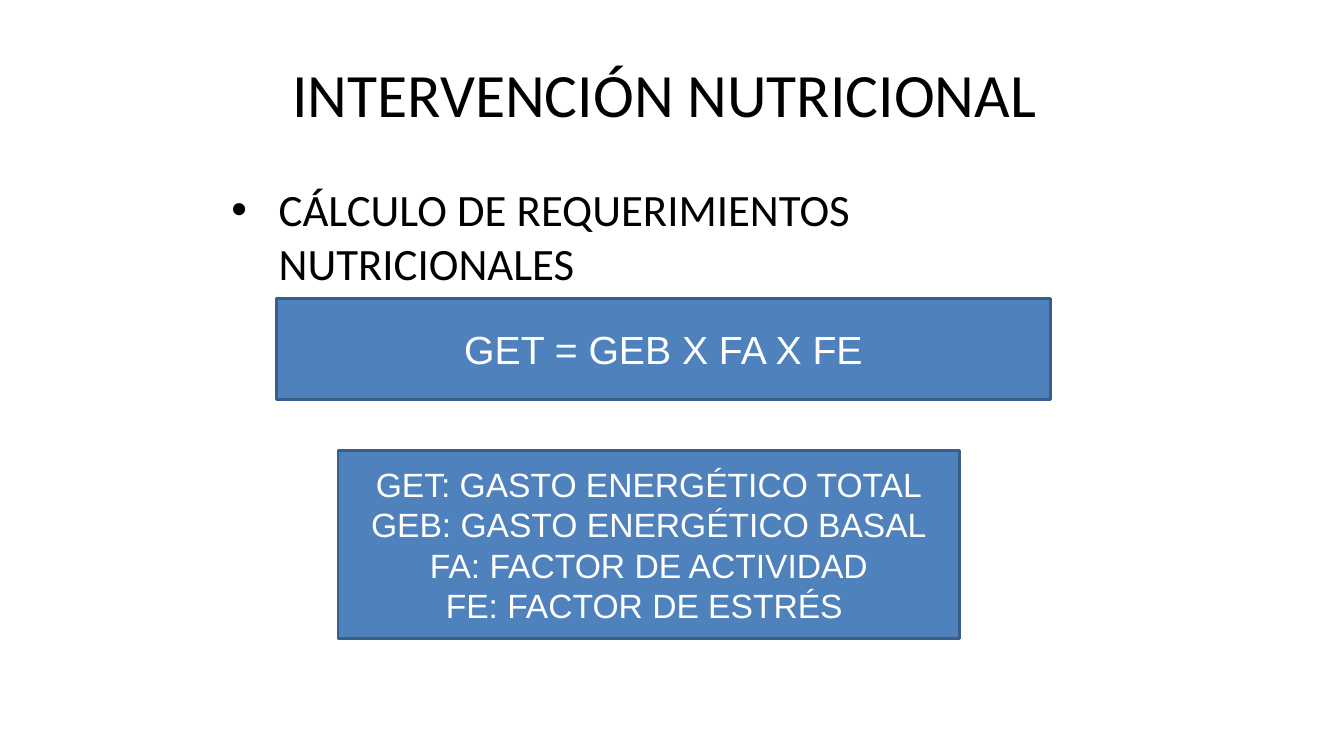
from dataclasses import dataclass

from lxml.etree import SubElement
from pptx import Presentation
from pptx.dml.color import RGBColor
from pptx.enum.shapes import MSO_SHAPE
from pptx.enum.text import MSO_ANCHOR, MSO_AUTO_SIZE, PP_ALIGN
from pptx.oxml.ns import qn
from pptx.util import Cm, Pt


@dataclass(frozen=True)
class Theme:
    text: RGBColor = RGBColor(0, 0, 0)
    box_text: RGBColor = RGBColor(255, 255, 255)
    box_fill: RGBColor = RGBColor.from_string("4F81BD")
    box_line: RGBColor = RGBColor.from_string("395E89")
    heading_font: str = "Calibri"
    box_font: str = "Arial"
    title_size: int = 44
    body_size: int = 32
    formula_size: int = 28
    legend_size: int = 24


theme = Theme()


def write_text(shape, lines, *, size, font, color, align=PP_ALIGN.CENTER,
               anchor=MSO_ANCHOR.MIDDLE, bullet=None):
    frame = shape.text_frame
    frame.word_wrap = True
    frame.auto_size = MSO_AUTO_SIZE.NONE
    frame.vertical_anchor = anchor
    frame.text = "\n".join(lines)
    for paragraph in frame.paragraphs:
        paragraph.alignment = align
        paragraph.space_before = Pt(0)
        if bullet:
            properties = paragraph._p.get_or_add_pPr()
            properties.set("marL", str(Cm(1.27)))
            properties.set("indent", str(Cm(-1.19)))
            SubElement(properties, qn("a:buFont"), typeface="Arial")
            SubElement(properties, qn("a:buChar"), char=bullet)
        paragraph.font.size = Pt(size)
        paragraph.font.name = font
        paragraph.font.color.rgb = color


presentation = Presentation()
presentation.slide_width = Cm(33.87)
presentation.slide_height = Cm(19.05)
slide = presentation.slides.add_slide(presentation.slide_layouts[1])

title = slide.shapes.title
title.left, title.top, title.width, title.height = Cm(5.5), Cm(0.76), Cm(22.86), Cm(3.18)
write_text(title, ["INTERVENCIÓN NUTRICIONAL "], size=theme.title_size,
           font=theme.heading_font, color=theme.text)

body = slide.placeholders[1]
body.left, body.top, body.width, body.height = Cm(5.5), Cm(4.45), Cm(22.86), Cm(12.57)
write_text(body, ["CÁLCULO DE REQUERIMIENTOS NUTRICIONALES"], size=theme.body_size,
           font=theme.heading_font, color=theme.text, align=PP_ALIGN.LEFT,
           anchor=MSO_ANCHOR.TOP, bullet="•")

formula = ["GET = GEB X FA X FE"]
legend = [
    "GET: GASTO ENERGÉTICO TOTAL",
    "GEB: GASTO ENERGÉTICO BASAL",
    "FA: FACTOR DE ACTIVIDAD",
    "FE: FACTOR DE ESTRÉS ",
]
boxes = [
    (6.97, 7.53, 19.5, 2.54, formula, theme.formula_size),
    (8.52, 11.36, 15.67, 4.73, legend, theme.legend_size),
]
for left, top, width, height, lines, size in boxes:
    box = slide.shapes.add_shape(MSO_SHAPE.RECTANGLE, Cm(left), Cm(top), Cm(width), Cm(height))
    box.shadow.inherit = False
    box.fill.solid()
    box.fill.fore_color.rgb = theme.box_fill
    box.line.color.rgb = theme.box_line
    box.line.width = Pt(2)
    write_text(box, lines, size=size, font=theme.box_font, color=theme.box_text)

presentation.save("out.pptx")
